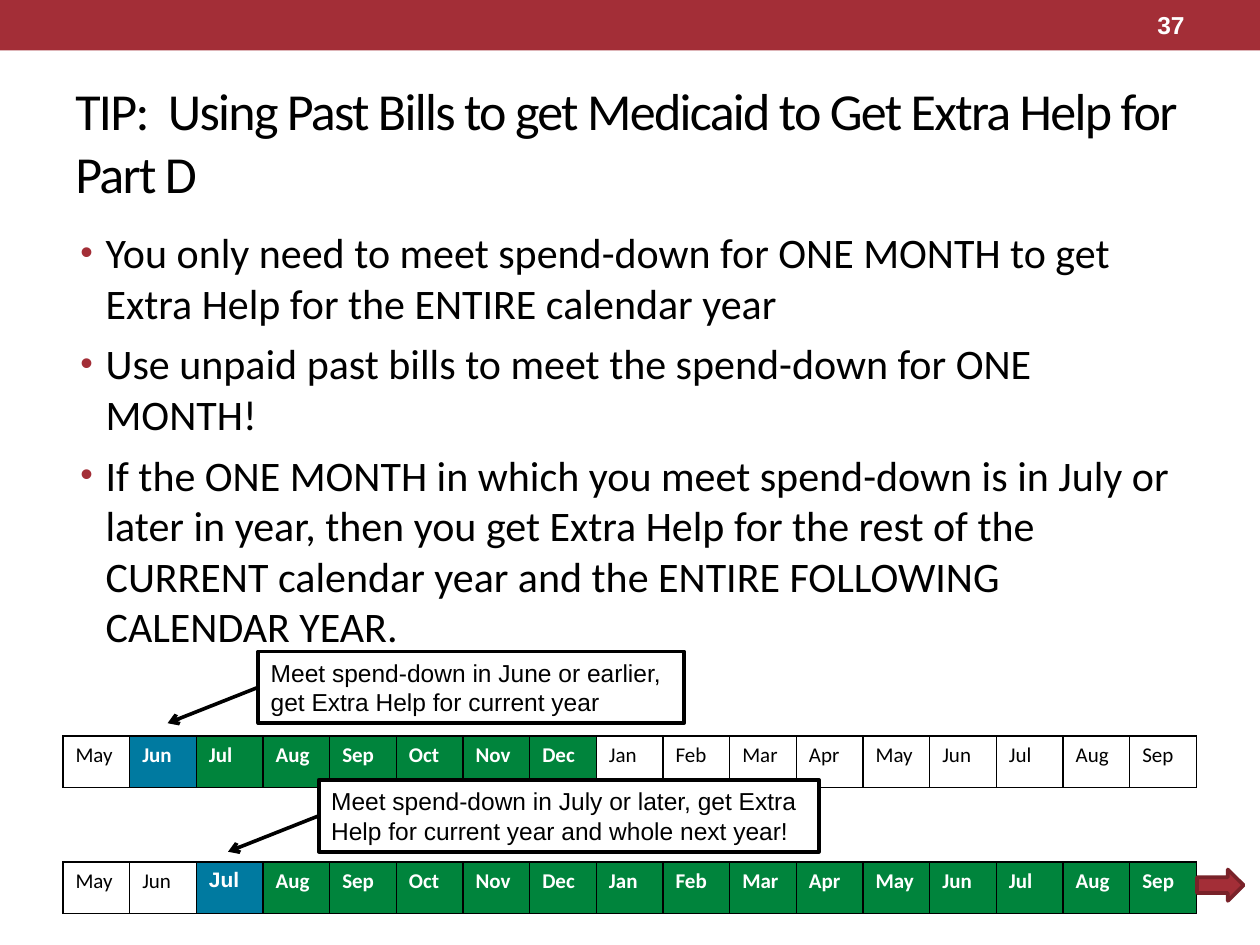
from pptx import Presentation
from pptx import util as u
from pptx.dml.color import RGBColor
from pptx.enum import shapes, text
from pptx.oxml.ns import qn
from lxml import etree

RED = RGBColor(0xA3, 0x2E, 0x37)
DARK_RED = RGBColor(0x79, 0x22, 0x29)
BLUE = RGBColor(0x00, 0x7A, 0xA0)
GREEN = RGBColor(0x00, 0x84, 0x3C)
BLACK = RGBColor(0, 0, 0)
WHITE = RGBColor(0xFF, 0xFF, 0xFF)

MONTHS = "Jan Feb Mar Apr May Jun Jul Aug Sep Oct Nov Dec".split()
FIRST_MONTH, MONTH_COUNT = MONTHS.index("May"), 17
OUTLINE = u.Pt(2.08)
BULLETS = [
    "You only need to meet spend-down for ONE MONTH to get Extra Help for the ENTIRE calendar year",
    "Use unpaid past bills to meet the spend-down for ONE MONTH!",
    "If the ONE MONTH in which you meet spend-down is in July or later in year, then you get "
    "Extra Help for the rest of the CURRENT calendar year and the ENTIRE FOLLOWING CALENDAR YEAR.",
]


def inches(*lengths):
    return [u.Inches(length) for length in lengths]


def write(para, words, size, font="Calibri", color=BLACK, bold=False,
          align=text.PP_ALIGN.LEFT, spacing=None):
    para.alignment = align
    span = para.add_run()
    span.text = words
    span.font.size = u.Pt(size)
    span.font.name = font
    span.font.color.rgb = color
    span.font.bold = bold
    if spacing is not None:
        span.font._element.set("spc", str(spacing))


def add_text_frame(page, box, anchor):
    frame = page.shapes.add_textbox(*inches(*box)).text_frame
    frame.word_wrap = True
    frame.vertical_anchor = anchor
    return frame


def add_block(page, kind, box, fill, line=None):
    block = page.shapes.add_shape(kind, *inches(*box))
    block.shadow.inherit = False
    block.fill.solid()
    block.fill.fore_color.rgb = fill
    if line is None:
        block.line.fill.background()
    else:
        block.line.color.rgb = line
        block.line.width = OUTLINE
    return block


def set_bullet(para):
    props = para._p.get_or_add_pPr()
    props.set("marL", str(u.Inches(0.24)))
    props.set("indent", str(u.Inches(-0.2)))
    color = etree.SubElement(props, qn("a:buClr"))
    etree.SubElement(color, qn("a:srgbClr"), val=str(RED))
    etree.SubElement(props, qn("a:buSzPct"), val="85000")
    etree.SubElement(props, qn("a:buFont"), typeface="Arial")
    etree.SubElement(props, qn("a:buChar"), char="•")


def add_header(page, box):
    left, top, width, height = box
    add_block(page, shapes.MSO_SHAPE.RECTANGLE, box, RED)
    number_box = (left + width - 1.67, top + 0.02, 1.17, height - 0.04)
    frame = add_text_frame(page, number_box, text.MSO_ANCHOR.MIDDLE)
    write(frame.paragraphs[0], "37", 14, "Arial", WHITE, True, text.PP_ALIGN.RIGHT)


def add_title(page, box):
    frame = add_text_frame(page, box, text.MSO_ANCHOR.MIDDLE)
    write(frame.paragraphs[0],
          "TIP:  Using Past Bills to get Medicaid to Get Extra Help for Part D",
          29.7, spacing=-100)


def add_bullets(page, box):
    frame = add_text_frame(page, box, text.MSO_ANCHOR.TOP)
    for index, words in enumerate(BULLETS):
        para = frame.add_paragraph() if index else frame.paragraphs[0]
        set_bullet(para)
        para.space_after = u.Pt(6)
        write(para, words, 24)


def set_borders(cell):
    props = cell._tc.get_or_add_tcPr()
    for side in ("lnL", "lnR", "lnT", "lnB"):
        border = etree.SubElement(props, qn("a:" + side), w=str(u.Pt(1)))
        fill = etree.SubElement(border, qn("a:solidFill"))
        etree.SubElement(fill, qn("a:srgbClr"), val=str(BLACK))


def add_timeline(page, box, met, end, met_font="Calibri"):
    """Blue marks the month the spend-down is met; green runs up to column end."""
    table = page.shapes.add_table(1, MONTH_COUNT, *inches(*box)).table
    table.first_row = table.horz_banding = False
    for index in range(MONTH_COUNT):
        table.columns[index].width = u.Inches(box[2] / MONTH_COUNT)
        cell = table.cell(0, index)
        covered = met <= index < end
        set_borders(cell)
        cell.fill.solid()
        cell.fill.fore_color.rgb = BLUE if index == met else GREEN if covered else WHITE
        write(cell.text_frame.paragraphs[0], MONTHS[(FIRST_MONTH + index) % 12], 12,
              met_font if index == met else "Calibri",
              WHITE if covered else BLACK, covered)


def add_callout(page, box, words):
    left, top, width, height = box
    block = add_block(page, shapes.MSO_SHAPE.RECTANGLE, box, WHITE, BLACK)
    block.text_frame.word_wrap = True
    block.text_frame.vertical_anchor = text.MSO_ANCHOR.TOP
    write(block.text_frame.paragraphs[0], words, 14, "Arial")
    # Pointer from the left edge down to the month
    middle = top + height / 2
    pointer = page.shapes.add_connector(
        shapes.MSO_CONNECTOR.STRAIGHT, *inches(left, middle, left - 0.72, middle + 0.285))
    pointer.line.color.rgb = BLACK
    pointer.line.width = OUTLINE
    etree.SubElement(pointer.line._get_or_add_ln(), qn("a:tailEnd"), type="arrow")
    etree.SubElement(pointer._element.spPr, qn("a:effectLst"))


def main():
    deck = Presentation()
    deck.slide_width, deck.slide_height = inches(10, 7.5)
    page = deck.slides.add_slide(deck.slide_layouts[6])

    add_header(page, (0, 0, 10, 0.4))
    add_title(page, (0.5, 0.58, 9, 1.08))
    add_bullets(page, (0.5, 1.75, 9, 5.33))

    # Timelines with their callouts
    add_timeline(page, (0.5, 5.84, 9, 0.41), met=1, end=8)
    add_timeline(page, (0.5, 6.84, 9, 0.41), met=2, end=MONTH_COUNT, met_font="Arial")
    add_callout(page, (2.05, 5.17, 3.38, 0.57),
                "Meet spend-down in June or earlier, get Extra Help for current year")
    add_callout(page, (2.53, 6.19, 3.97, 0.57),
                "Meet spend-down in July or later, get Extra Help for current year and whole next year!")

    # Coverage goes on past September
    add_block(page, shapes.MSO_SHAPE.RIGHT_ARROW, (9.5, 6.9, 0.37, 0.25), RED, DARK_RED)
    deck.save("out.pptx")


if __name__ == "__main__":
    main()
